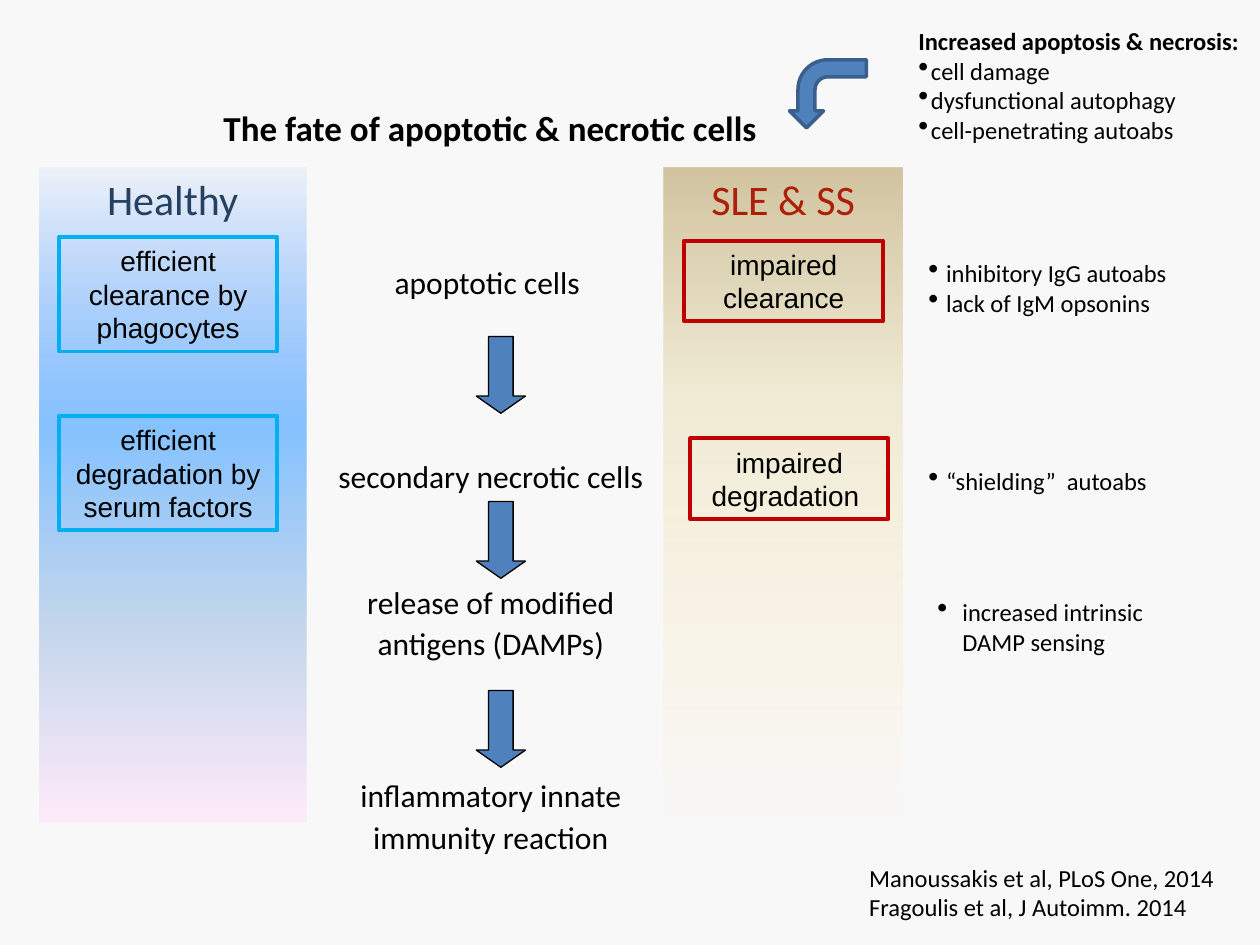
from lxml import etree
from pptx import Presentation
from pptx.dml.color import RGBColor
from pptx.enum.shapes import MSO_SHAPE
from pptx.enum.text import MSO_ANCHOR, PP_ALIGN
from pptx.oxml.ns import qn
from pptx.util import Inches, Pt

RECTANGLE = MSO_SHAPE.RECTANGLE
DOWN_ARROW = MSO_SHAPE.DOWN_ARROW
BENT_ARROW = MSO_SHAPE.BENT_ARROW
TOP, MIDDLE = MSO_ANCHOR.TOP, MSO_ANCHOR.MIDDLE
LEFT, CENTER = PP_ALIGN.LEFT, PP_ALIGN.CENTER

BLACK, BLUE = "000000", "4F81BD"
HEALTHY_STOPS = [(0, "5E9EFF", 6), (40, "85C2FF", 100), (70, "C4D6EB", 100), (100, "FFEBFA", 100)]
DISEASE_STOPS = [(0, "FFEFD1", 0), (65, "F0EBD5", 100), (100, "D1C39F", 100)]


def color(value):
    """Turn a hex string into a colour."""
    return RGBColor.from_string(value)


def write(paragraph, text, size, font="Calibri", ink=BLACK, bold=False, align=LEFT):
    """Add one styled run to a paragraph."""
    paragraph.alignment = align
    run = paragraph.add_run()
    run.text = text
    run.font.size = Pt(size)
    run.font.name = font
    run.font.bold = bold
    run.font.color.rgb = color(ink)


def hang(paragraph, indent, bulleted=True):
    """Give a paragraph a hanging indent and, if wanted, a bullet."""
    properties = paragraph._p.get_or_add_pPr()
    properties.set("marL", str(Inches(indent)))
    properties.set("indent", str(-Inches(indent)))
    if bulleted:
        etree.SubElement(properties, qn("a:buSzPct")).set("val", "120000")
        etree.SubElement(properties, qn("a:buChar")).set("char", "•")


def add_frame(slide, box, wrap=True, anchor=TOP):
    """Add a text box and return its text frame."""
    frame = slide.shapes.add_textbox(*map(Inches, box)).text_frame
    frame.word_wrap = wrap
    frame.vertical_anchor = anchor
    return frame


def add_lines(slide, box, lines, indent=0, heading=None, wrap=False):
    """Add 14 point lines, bulleted when an indent is given, under an optional heading."""
    frame = add_frame(slide, box, wrap)
    entries = ([heading] if heading else []) + lines
    for index, text in enumerate(entries):
        paragraph = frame.paragraphs[0] if index == 0 else frame.add_paragraph()
        is_heading = text == heading
        if indent:
            hang(paragraph, indent, not is_heading)
        write(paragraph, text, 14, bold=is_heading)


def add_solid(slide, preset, box, fill=None, line=None, width=0.75):
    """Add a preset shape with flat fill and outline."""
    shape = slide.shapes.add_shape(preset, *map(Inches, box))
    shape.shadow.inherit = False
    if fill:
        shape.fill.solid()
        shape.fill.fore_color.rgb = color(fill)
    else:
        shape.fill.background()
    if line:
        shape.line.color.rgb = color(line)
        shape.line.width = Pt(width)
    else:
        shape.line.fill.background()
    return shape


def fill_gradient(shape, stops, angle):
    """Fill a shape with a linear gradient of (percent, colour, opacity) stops."""
    shape.fill.gradient()
    shape.fill.gradient_angle = angle
    stop_list = shape._element.spPr.find(qn("a:gradFill")).find(qn("a:gsLst"))
    for old_stop in list(stop_list):
        stop_list.remove(old_stop)
    for percent, value, opacity in stops:
        stop = etree.SubElement(stop_list, qn("a:gs"), pos=str(percent * 1000))
        tint = etree.SubElement(stop, qn("a:srgbClr"), val=value)
        if opacity < 100:
            etree.SubElement(tint, qn("a:alpha"), val=str(opacity * 1000))


def add_column(slide, box, heading, ink, stops, angle, outline, steps):
    """Add a gradient column with its heading and outlined steps offset from its corner."""
    left, top = box[:2]
    column = add_solid(slide, RECTANGLE, box)
    fill_gradient(column, stops, angle)
    column.text_frame.vertical_anchor = TOP
    write(column.text_frame.paragraphs[0], heading, 24, ink=ink, align=CENTER)
    for dx, dy, width, height, text in steps:
        step = add_solid(slide, RECTANGLE, (left + dx, top + dy, width, height), line=outline, width=2.25)
        step.text_frame.word_wrap = True
        step.text_frame.vertical_anchor = MIDDLE
        write(step.text_frame.paragraphs[0], text, 16, "Arial", align=CENTER)


def add_cell_fate(slide, box):
    """Add the central sequence of cell stages and the arrows between them."""
    left, top = box[:2]
    frame = add_frame(slide, box)
    stages = [
        ("apoptotic cells ", 0, 1.4),
        ("secondary necrotic cells", 87, 1.1),
        ("release of modified", 48, 1.1),
        ("antigens (DAMPs)", 0, 1.1),
        ("inflammatory innate", 63, 1.1),
        ("immunity reaction", 0, 1.1),
    ]
    for index, (text, gap, spacing) in enumerate(stages):
        paragraph = frame.paragraphs[0] if index == 0 else frame.add_paragraph()
        paragraph.line_spacing = spacing
        if gap:
            paragraph.space_before = Pt(gap)
        write(paragraph, text, 18, align=CENTER)
    for dy in (0.75, 2.06, 3.56):
        arrow = add_solid(slide, DOWN_ARROW, (left + 1.34, top + dy, 0.39, 0.61), BLUE, BLACK)
        arrow.adjustments[0] = 0.5
        arrow.adjustments[1] = 0.35


def add_trigger(slide, box):
    """Add the causes of increased cell death and the bent arrow leading from them."""
    left, top = box[:2]
    causes = ["cell damage", "dysfunctional autophagy", "cell-penetrating autoabs"]
    add_lines(slide, box, causes, 0.1, "Increased apoptosis & necrosis:")
    arrow = add_solid(slide, BENT_ARROW, (left - 0.89, top + 0.28, 0.54, 0.61), BLUE, "3A5F8C", 2)
    arrow.rotation = 270
    arrow._element.spPr.find(qn("a:xfrm")).set("flipH", "1")


def main():
    """Build and save the slide."""
    presentation = Presentation()
    presentation.slide_width, presentation.slide_height = Inches(10), Inches(7.5)
    slide = presentation.slides.add_slide(presentation.slide_layouts[6])
    slide.background.fill.solid()
    slide.background.fill.fore_color.rgb = color("F8F8F8")

    title = add_frame(slide, (1.41, 0.78, 4.96, 0.47), anchor=MIDDLE)
    write(title.paragraphs[0], "The fate of apoptotic & necrotic cells", 20, bold=True, align=CENTER)
    add_cell_fate(slide, (2.44, 1.92, 2.91, 5.11))
    add_column(slide, (0.31, 1.33, 2.12, 5.2), "Healthy", "254061", HEALTHY_STOPS, 270, "00B0F0", [
        (0.16, 0.55, 1.73, 0.91, "efficient clearance by phagocytes"),
        (0.16, 1.97, 1.73, 0.91, "efficient degradation by serum factors"),
    ])
    add_column(slide, (5.27, 1.33, 1.89, 5.2), "SLE & SS", "AC1F08", DISEASE_STOPS, 90, "C00000", [
        (0.16, 0.58, 1.58, 0.64, "impaired clearance"),
        (0.21, 2.15, 1.57, 0.64, "impaired degradation "),
    ])
    add_trigger(slide, (7.19, 0.16, 2.77, 1.04))
    add_lines(slide, (7.27, 2, 2.16, 0.57), ["inhibitory IgG autoabs", "lack of IgM opsonins"], 0.14)
    add_lines(slide, (7.27, 3.65, 1.96, 0.34), ["“shielding”  autoabs"], 0.14)
    add_lines(slide, (7.34, 4.69, 1.95, 0.57), ["increased intrinsic DAMP sensing"], 0.2, wrap=True)
    citations = ["Manoussakis et al, PLoS One, 2014", "Fragoulis et al, J Autoimm. 2014"]
    add_lines(slide, (6.8, 6.8, 3.06, 0.57), citations)
    presentation.save("out.pptx")


if __name__ == "__main__":
    main()
